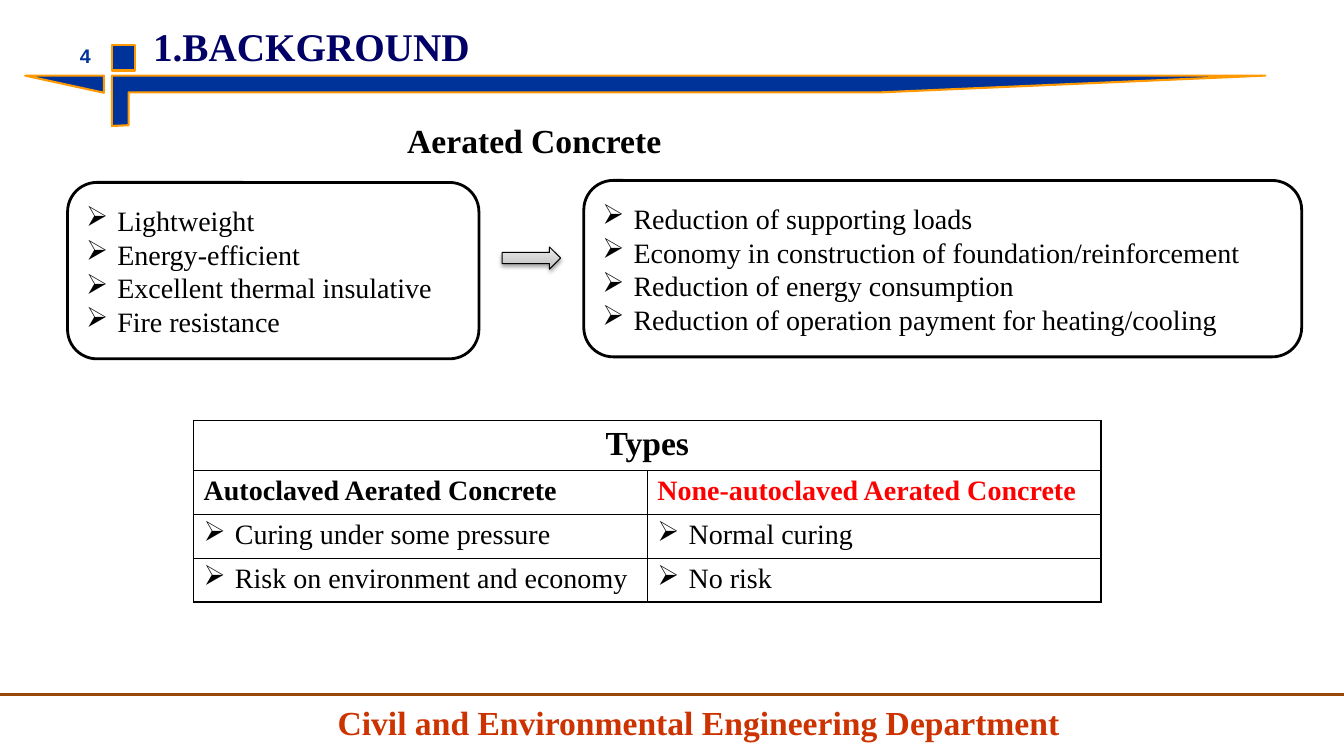
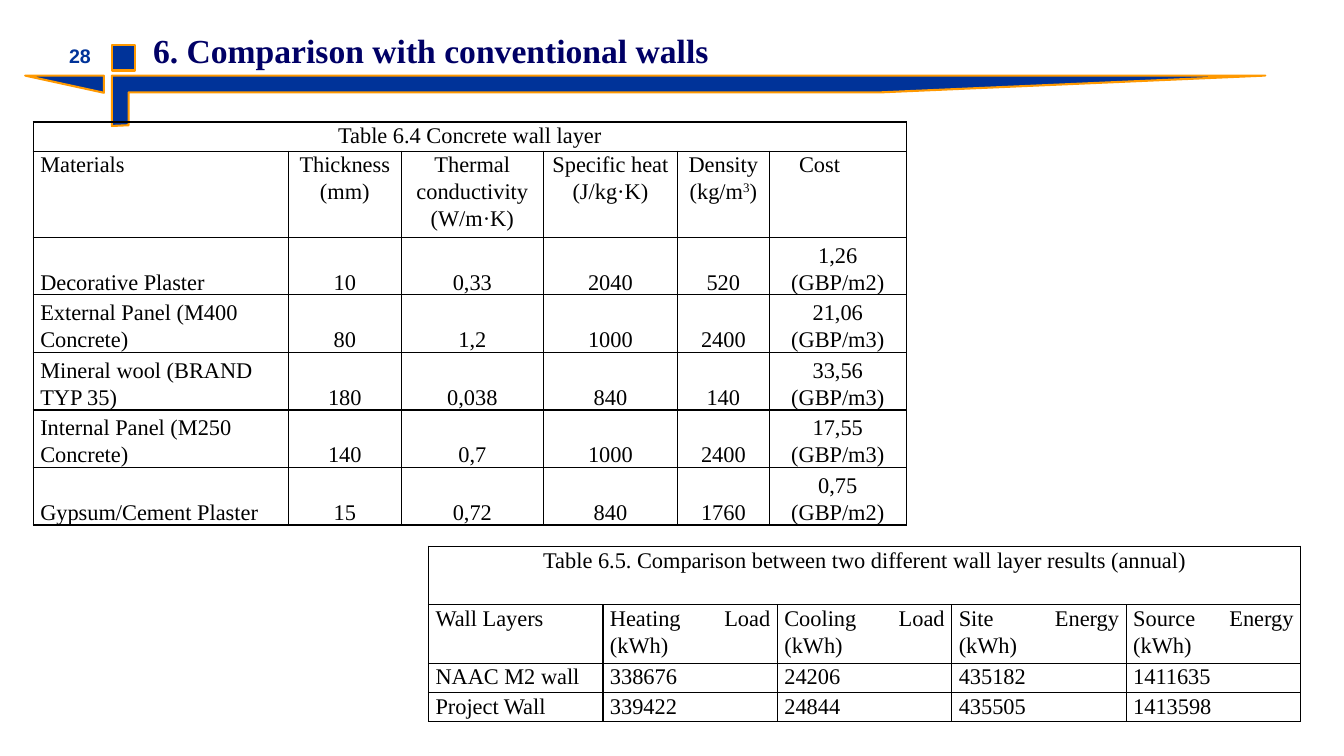
from dataclasses import dataclass

from lxml import etree
from pptx import Presentation
from pptx import util as u
from pptx.dml.color import RGBColor
from pptx.enum import shapes, text
from pptx.oxml import ns

PX = 9144  # EMU, 100 px to the inch
BLANK_LAYOUT = 6
SHAPE = shapes.MSO_SHAPE
ALIGN = text.PP_ALIGN
ANCHOR = text.MSO_ANCHOR


@dataclass(frozen=True)
class Theme:
    serif: str = "Times New Roman"
    sans: str = "Arial"
    black: str = "000000"
    white: str = "FFFFFF"
    navy: str = "000066"
    blue: str = "003399"
    orange: str = "FF9900"
    brown: str = "974706"
    rust: str = "CC3300"
    red: str = "FF0000"
    arrow_dark: str = "BDBDBD"
    arrow_light: str = "EEEEEE"
    title: int = 28
    heading: int = 24
    body: int = 20
    small: int = 16
    number: int = 14


THEME = Theme()


@dataclass(frozen=True)
class Style:
    size: int = THEME.body
    color: str = THEME.black
    bold: bool = False
    font: str = THEME.serif
    align: ALIGN = ALIGN.LEFT
    spacing: float = 1.0
    bullet: bool = False


def px(*lengths):
    return [u.Emu(length * PX) for length in lengths]


def rgb(color):
    return RGBColor.from_string(color)


def add_xml(parent, tag, **attributes):
    values = {name: str(value) for name, value in attributes.items()}
    return etree.SubElement(parent, ns.qn(tag), values)


def write_paragraph(para, wording, style):
    """Write one paragraph; ^ marks the start and end of a superscript."""
    first, *rest = wording.split("^")
    para.text = first
    for piece in rest:
        para.add_run().text = piece
    para.alignment = style.align
    para.line_spacing = style.spacing
    for index, span in enumerate(para.runs):
        span.font.name = style.font
        span.font.size = u.Pt(style.size)
        span.font.bold = style.bold
        span.font.color.rgb = rgb(style.color)
        if index % 2:
            span.font._element.set("baseline", "30000")
    if style.bullet:
        properties = para._p.get_or_add_pPr()
        properties.set("marL", str(31 * PX))
        properties.set("indent", str(-31 * PX))
        add_xml(properties, "a:buChar", char="➢")


def add_text(page, place, wording, style, anchor=ANCHOR.TOP, wrap=True):
    frame = page.shapes.add_textbox(*px(*place)).text_frame
    frame.word_wrap = wrap
    frame.vertical_anchor = anchor
    write_paragraph(frame.paragraphs[0], wording, style)


def add_outlined(page, kind, place, fill, line, width):
    shape = page.shapes.add_shape(kind, *px(*place))
    shape.shadow.inherit = False
    shape.fill.solid()
    shape.fill.fore_color.rgb = rgb(fill)
    shape.line.color.rgb = rgb(line)
    shape.line.width = u.Pt(width)
    return shape


def add_bullet_box(page, place, items):
    box = add_outlined(page, SHAPE.ROUNDED_RECTANGLE, place,
                       THEME.white, THEME.black, 2)
    frame = box.text_frame
    frame.word_wrap = True
    frame.vertical_anchor = ANCHOR.MIDDLE
    frame.text = "\n".join(items)
    for para, item in zip(frame.paragraphs, items):
        write_paragraph(para, item, Style(bullet=True))


def add_shaded_arrow(page, place):
    arrow = add_outlined(page, SHAPE.RIGHT_ARROW, place,
                         THEME.arrow_light, THEME.black, 0.75)
    arrow.fill.gradient()
    arrow.fill.gradient_angle = 90
    for stop, color in zip(arrow.fill.gradient_stops,
                           (THEME.arrow_dark, THEME.arrow_light)):
        stop.color.rgb = rgb(color)
    effects = arrow._element.spPr.find(ns.qn("a:effectLst"))
    shadow = add_xml(effects, "a:outerShdw", blurRad=u.Pt(3.1), dist=u.Pt(1.6),
                     dir=5400000, rotWithShape=0)
    color = add_xml(shadow, "a:srgbClr", val=THEME.black)
    add_xml(color, "a:alpha", val=38000)


def add_rule(page, y, color, width):
    rule = page.shapes.add_connector(shapes.MSO_CONNECTOR.STRAIGHT,
                                     *px(0, y, 1333, y))
    rule.line.color.rgb = rgb(color)
    rule.line.width = u.Pt(width)
    add_xml(rule._element.spPr, "a:effectLst")


def border_cell(cell):
    properties = cell._tc.get_or_add_tcPr()
    for side in ("a:lnL", "a:lnR", "a:lnT", "a:lnB"):
        line = add_xml(properties, side, w=u.Pt(1))
        fill = add_xml(line, "a:solidFill")
        add_xml(fill, "a:srgbClr", val=THEME.black)
    cell.fill.background()


def add_grid(page, left, top, widths, heights, rows, style_of, tight=False):
    """Add a table whose first row is one merged caption.

    style_of(row, column) gives a cell's Style and vertical anchor.
    """
    frame = page.shapes.add_table(len(heights), len(widths), *px(
        left, top, sum(widths), sum(heights)))
    table = frame.table
    table.first_row = table.horz_banding = False
    for column, width in zip(table.columns, px(*widths)):
        column.width = width
    for row, height in zip(table.rows, px(*heights)):
        row.height = height
    for cell in table.iter_cells():
        border_cell(cell)
    table.cell(0, 0).merge(table.cell(0, len(widths) - 1))
    for r, row in enumerate(rows):
        for c, wording in enumerate(row):
            cell = table.cell(r, c)
            style, cell.vertical_anchor = style_of(r, c)
            if tight:
                cell.margin_left, cell.margin_right = px(7, 7)
                cell.margin_top = cell.margin_bottom = 0
            write_paragraph(cell.text_frame.paragraphs[0], wording, style)
    return table


def add_page(deck, number, title, title_place, title_size):
    """Add a page with the blue band, its number and its title."""
    page = deck.slides.add_slide(deck.slide_layouts[BLANK_LAYOUT])
    band = [(SHAPE.HALF_FRAME, (111, 75, 1144, 50), 0),
            (SHAPE.RIGHT_TRIANGLE, (25, 75, 78, 17), 180),
            (SHAPE.RECTANGLE, (111, 45, 23, 25), 0)]
    for kind, place, turn in band:
        part = add_outlined(page, kind, place, THEME.blue, THEME.orange, 1.5)
        part.rotation = turn
    add_text(page, (33, 35, 67, 40), number,
             Style(THEME.number, THEME.blue, True, THEME.sans, ALIGN.RIGHT),
             ANCHOR.MIDDLE)
    add_text(page, title_place, title, Style(title_size, THEME.navy, True))
    return page


def types_style(row, column):
    if row == 0:
        style = Style(THEME.heading, bold=True, align=ALIGN.CENTER)
    elif row == 1:
        style = Style(color=THEME.red if column else THEME.black, bold=True)
    else:
        style = Style(bullet=True)
    return style, ANCHOR.TOP


def layers_style(row, column):
    align = ALIGN.CENTER if row == 0 or column else ALIGN.LEFT
    anchor = ANCHOR.BOTTOM if row > 1 else ANCHOR.TOP
    return Style(THEME.small, align=align, spacing=1.07), anchor


def results_style(row, column):
    align = ALIGN.JUSTIFY if row else ALIGN.CENTER
    return Style(THEME.small, align=align, spacing=1.07), ANCHOR.TOP


def build_background(deck):
    page = add_page(deck, "4", "1.BACKGROUND", (142, 17, 417, 88), THEME.title)
    add_rule(page, 689, THEME.brown, 2)
    add_text(page, (325, 699, 743, 42),
             "Civil and Environmental Engineering Department",
             Style(THEME.heading, THEME.rust, True, spacing=0.8), wrap=False)
    add_bullet_box(page, (67, 181, 408, 175), [
        "Lightweight", "Energy-efficient",
        "Excellent thermal insulative", "Fire resistance"])
    add_bullet_box(page, (579, 179, 712, 175), [
        "Reduction of supporting loads",
        "Economy in construction of foundation/reinforcement",
        "Reduction of energy consumption",
        "Reduction of operation payment for heating/cooling"])
    add_text(page, (394, 114, 325, 50), "Aerated Concrete",
             Style(THEME.heading, bold=True))
    add_shaded_arrow(page, (498, 245, 58, 22))
    add_grid(page, 192, 417, [450] * 2, [50] + [43] * 3, [
        ["Types"],
        ["Autoclaved Aerated Concrete", "None-autoclaved Aerated Concrete"],
        ["Curing under some pressure", "Normal curing"],
        ["Risk on environment and economy", "No risk"],
    ], types_style)


def build_comparison(deck):
    page = add_page(deck, "28", "6. Comparison with conventional walls",
                    (142, 25, 600, 50), THEME.heading)
    layers = add_grid(
        page, 33, 121, [253, 112, 141, 133, 91, 136], [29, 85] + [57] * 5, [
            ["Table 6.4 Concrete wall layer"],
            ["Materials", "Thickness (mm)", "Thermal conductivity (W/m·K)",
             "Specific heat (J/kg·K)", "Density (kg/m^3^)", "Cost"],
            ["Decorative Plaster", "10", "0,33", "2040", "520",
             "1,26 (GBP/m2)"],
            ["External Panel (M400 Concrete)", "80", "1,2", "1000", "2400",
             "21,06 (GBP/m3)"],
            ["Mineral wool (BRAND TYP 35)", "180", "0,038", "840", "140",
             "33,56 (GBP/m3)"],
            ["Internal Panel (M250 Concrete)", "140", "0,7", "1000", "2400",
             "17,55 (GBP/m3)"],
            ["Gypsum/Cement Plaster", "15", "0,72", "840", "1760",
             "0,75 (GBP/m2)"],
        ], layers_style, tight=True)
    layers.cell(1, 5).margin_right = u.Emu(43 * PX)
    add_grid(page, 425, 542, [173] * 5, [58, 58, 29, 29], [
        ["Table 6.5. Comparison between two different wall layer results "
         "(annual)"],
        ["Wall Layers", "Heating Load (kWh)", "Cooling Load (kWh)",
         "Site Energy (kWh)", "Source Energy (kWh)"],
        ["NAAC M2 wall", "338676", "24206", "435182", "1411635"],
        ["Project Wall", "339422", "24844", "435505", "1413598"],
    ], results_style, tight=True)


def main():
    deck = Presentation()
    deck.slide_width, deck.slide_height = px(1333, 750)
    build_background(deck)
    build_comparison(deck)
    deck.save("out.pptx")


if __name__ == "__main__":
    main()
